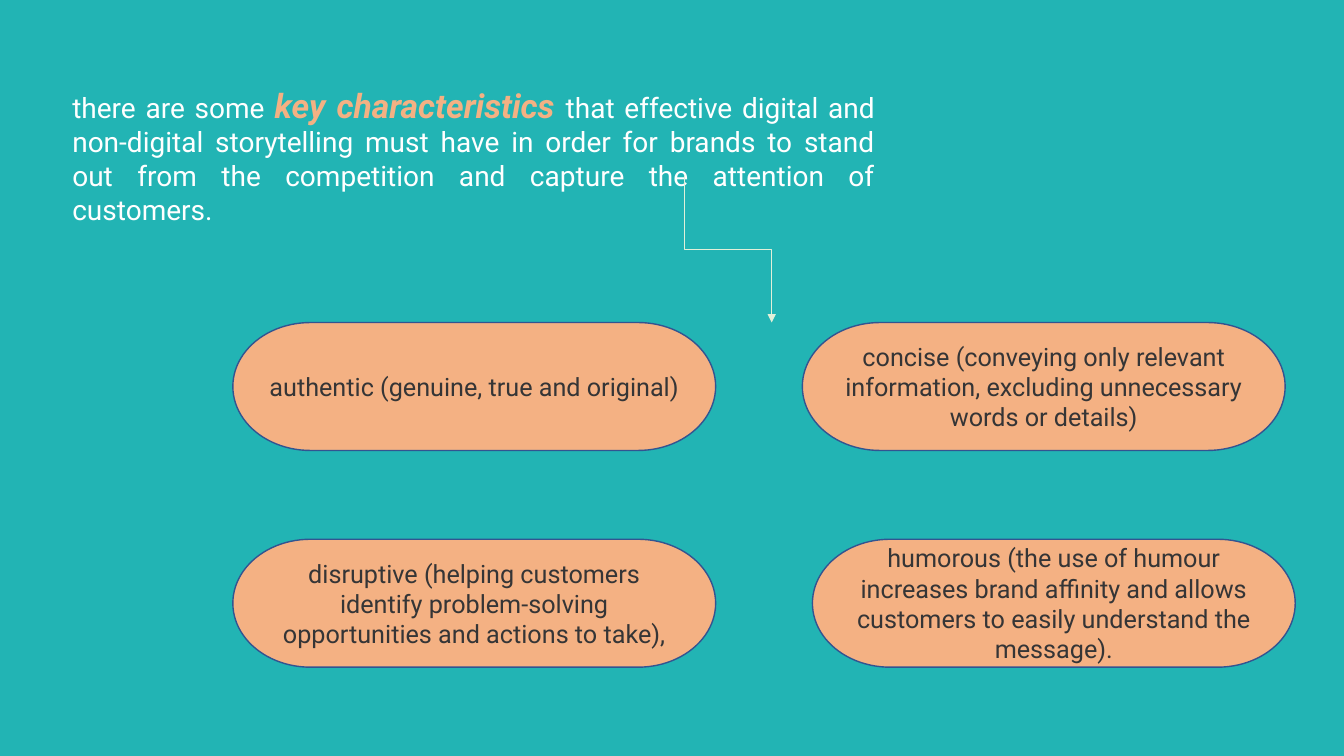
from dataclasses import dataclass

from pptx import Presentation
from pptx.dml.color import RGBColor
from pptx.enum.dml import MSO_FILL
from pptx.enum.shapes import MSO_CONNECTOR, MSO_SHAPE
from pptx.enum.text import MSO_ANCHOR, MSO_AUTO_SIZE, PP_ALIGN
from pptx.oxml.ns import qn
from pptx.slide import Slide
from pptx.text.text import _Run
from pptx.util import Pt
from lxml import etree

TERMINATOR = MSO_SHAPE.FLOWCHART_TERMINATOR
ELBOW = MSO_CONNECTOR.ELBOW
MIDDLE = MSO_ANCHOR.MIDDLE
GROW = MSO_AUTO_SIZE.SHAPE_TO_FIT_TEXT
CENTER, JUSTIFY = PP_ALIGN.CENTER, PP_ALIGN.JUSTIFY

FONT = "Roboto"
COLORS = {
    "background": "22B4B4",
    "intro": "FFFFFF",
    "accent": "F4B183",
    "outline": "325491",
    "dark": "353536",
    "arrow": "E2F0D9",
}
PILL_WIDTH, PILL_HEIGHT = 344.9, 91.4
LEFT_COLUMN = 166.3
TOP_ROW, BOTTOM_ROW = 230.4, 385.2


@dataclass
class Span:
    text: str
    size: float
    color: str
    emphasis: bool = False


@dataclass
class Characteristic:
    left: float
    top: float
    text: str


INTRO = [
    Span("there are some ", 20, "intro"),
    Span("key characteristics ", 24, "accent", True),
    Span(
        "that effective digital and non-digital storytelling must have in order "
        "for brands to stand out from the competition and capture the attention "
        "of customers.",
        20,
        "intro",
    ),
]
CHARACTERISTICS = [
    Characteristic(LEFT_COLUMN, TOP_ROW, "authentic (genuine, true and original)"),
    Characteristic(
        573.1,
        TOP_ROW,
        "concise (conveying only relevant information, excluding unnecessary "
        "words or details)",
    ),
    Characteristic(
        LEFT_COLUMN,
        BOTTOM_ROW,
        "disruptive (helping customers identify problem-solving opportunities "
        "and actions to take),",
    ),
    Characteristic(
        580.3,
        BOTTOM_ROW,
        "humorous (the use of humour increases brand affinity and allows "
        "customers to easily understand the message).",
    ),
]


def rgb(name: str) -> RGBColor:
    return RGBColor.from_string(COLORS[name])


def format_run(run: _Run, size: float, color: str, emphasis: bool = False) -> None:
    run.font.name = FONT
    run.font.size = Pt(size)
    run.font.color.rgb = rgb(color)
    run.font.bold = emphasis
    run.font.italic = emphasis


def draw_intro(page: Slide) -> None:
    box = page.shapes.add_textbox(Pt(44.6), Pt(56.9), Pt(587.5), Pt(85))
    box.text_frame.word_wrap = True
    box.text_frame.auto_size = GROW
    para = box.text_frame.paragraphs[0]
    para.alignment = JUSTIFY
    for span in INTRO:
        run = para.add_run()
        run.text = span.text
        format_run(run, span.size, span.color, span.emphasis)


def draw_arrow(page: Slide) -> None:
    left, top, width, height = 467.4, 146.5, 105.1, 62.6
    arrow = page.shapes.add_connector(
        ELBOW, Pt(left + width), Pt(top), Pt(left), Pt(top + height)
    )
    arrow.line.color.rgb = rgb("arrow")
    arrow.line.width = Pt(0.5)
    properties = arrow._element.spPr
    properties.find(qn("a:xfrm")).set("rot", str(270 * 60000))
    etree.SubElement(properties.find(qn("a:ln")), qn("a:tailEnd"), type="triangle")
    etree.SubElement(properties, qn("a:effectLst"))


def draw_characteristic(page: Slide, item: Characteristic) -> None:
    pill = page.shapes.add_shape(
        TERMINATOR, Pt(item.left), Pt(item.top), Pt(PILL_WIDTH), Pt(PILL_HEIGHT)
    )
    pill.shadow.inherit = False
    pill.fill.solid()
    pill.fill.fore_color.rgb = rgb("accent")
    pill.line.color.rgb = rgb("outline")
    pill.line.width = Pt(1)
    frame = pill.text_frame
    frame.text = item.text
    frame.word_wrap = True
    frame.vertical_anchor = MIDDLE
    para = frame.paragraphs[0]
    para.alignment = CENTER
    format_run(para.runs[0], 18, "dark")


def main() -> None:
    deck = Presentation()
    deck.slide_width, deck.slide_height = Pt(960), Pt(540)
    page = deck.slides.add_slide(deck.slide_layouts[6])
    page.background.fill.solid()
    page.background.fill.fore_color.rgb = rgb("background")
    draw_intro(page)
    draw_arrow(page)
    for item in CHARACTERISTICS:
        draw_characteristic(page, item)
    deck.save("out.pptx")


if __name__ == "__main__":
    main()
